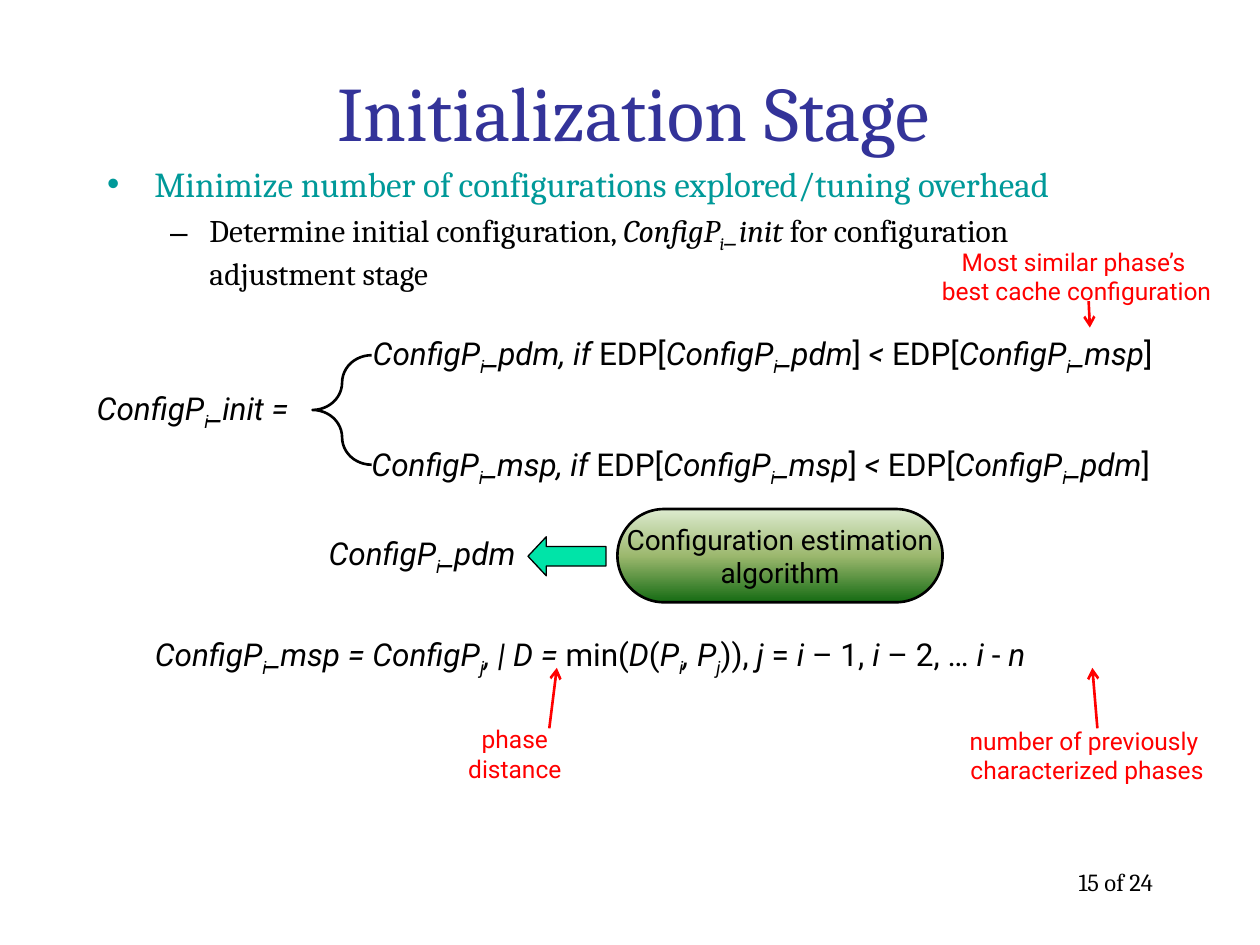
from copy import deepcopy
from dataclasses import dataclass

from lxml.etree import SubElement
from pptx import Presentation
from pptx.dml.color import RGBColor
from pptx.enum.shapes import MSO_CONNECTOR, MSO_SHAPE
from pptx.enum.text import MSO_ANCHOR, MSO_AUTO_SIZE, PP_ALIGN
from pptx.oxml.ns import qn
from pptx.util import Pt


@dataclass(frozen=True)
class Theme:
    serif: str = "Cambria"
    sans: str = "Roboto"
    title: str = "333399"
    heading: str = "009999"
    ink: str = "000000"
    note: str = "FF0000"
    arrow: str = "00E4A8"
    gradient: tuple = ((0, "DDEBCF"), (0.5, "9CB86E"), (1, "156B13"))
    title_size: int = 44
    heading_size: int = 20
    text_size: int = 18
    box_size: int = 16
    note_size: int = 14
    line: float = 1.5
    thin_line: float = 0.75


THEME = Theme()
UPRIGHT, ITALIC, SUBSCRIPT = "upright", "italic", "subscript"


def config(suffix, index="i"):
    return [("ConfigP", ITALIC), (index, SUBSCRIPT), (suffix, ITALIC)]


def choice(winner, loser):
    return [
        *config(f"_{winner}, if "), ("EDP[", UPRIGHT), *config(f"_{winner}"),
        ("]", UPRIGHT), (" < ", ITALIC), ("EDP[", UPRIGHT),
        *config(f"_{loser}"), ("]", UPRIGHT),
    ]


TITLE = "Initialization Stage"
HEADING = [("Minimize number of configurations explored/tuning overhead", UPRIGHT)]
DETAIL = [
    ("Determine initial configuration, ", UPRIGHT), *config("_init "),
    ("for configuration adjustment stage", UPRIGHT),
]
MOST_SIMILAR = [
    *config("_msp = "), *config(", | D = ", "j"), ("min(", UPRIGHT),
    ("D", ITALIC), ("(", UPRIGHT), ("P", ITALIC), ("i", SUBSCRIPT),
    (", P", ITALIC), ("j", SUBSCRIPT), (")), ", UPRIGHT), ("j", ITALIC),
    (" = ", UPRIGHT), ("i", ITALIC), (" – 1, ", UPRIGHT), ("i", ITALIC),
    (" – 2, … ", UPRIGHT), ("i", ITALIC), (" - ", UPRIGHT), ("n", ITALIC),
]
FORMULAS = [
    ((48.2, 218.9, 134, 28.8), config("_init =")),
    ((205.9, 187.2, 488, 28.8), choice("pdm", "msp")),
    ((205.2, 250.6, 485.3, 28.8), choice("msp", "pdm")),
    ((180.7, 301.7, 127.4, 28.8), config("_pdm")),
    ((81.4, 359.3, 558, 28.8), MOST_SIMILAR),
]
NOTES = [
    ((530, 137.5, 170.6, 41), ["Most similar phase’s ", "best cache configuration"],
     (622.1, 172.1, 622.8, 187.2)),
    ((260, 410.4, 68.4, 41), ["phase distance"], (313.9, 416.2, 318.2, 381.6)),
    ((547.2, 411.1, 148, 41), ["number of previously ", "characterized phases"],
     (627.1, 416.2, 624.2, 381.6)),
]
ESTIMATOR = ["Configuration estimation", "algorithm"]
ESTIMATOR_AT = (352.8, 290.9, 185.8, 53.3)
ARROW_AT = (301.7, 306.7, 44.6, 22.3)
BRACE_AT = (178.6, 203, 33.8, 62.6)
TITLE_AT = (56, 18, 612, 90)
BODY_AT = (54, 89.3, 612, 82)
PAGE_AT = (516.2, 491.8, 149.8, 36)


def points(values):
    return [Pt(value) for value in values]


def rgb(value):
    return RGBColor.from_string(value)


def write(paragraph, runs, size, face, color, align=PP_ALIGN.LEFT):
    paragraph.alignment = align
    for text, style in runs:
        run = paragraph.add_run()
        run.text = text
        run.font.name = face
        run.font.size = Pt(size)
        run.font.bold = False
        run.font.italic = style != UPRIGHT
        run.font.color.rgb = rgb(color)
        if style == SUBSCRIPT:
            run._r.get_or_add_rPr().set("baseline", "-25000")


def write_lines(frame, lines, size, face, color, align):
    for number, text in enumerate(lines):
        paragraph = frame.add_paragraph() if number else frame.paragraphs[0]
        write(paragraph, [(text, UPRIGHT)], size, face, color, align)


def add_text_box(slide, place):
    frame = slide.shapes.add_textbox(*points(place)).text_frame
    frame.word_wrap = True
    return frame


def use_placeholder(shape, place, anchor):
    shape.left, shape.top, shape.width, shape.height = points(place)
    frame = shape.text_frame
    frame.auto_size = MSO_AUTO_SIZE.NONE
    frame.vertical_anchor = anchor
    return frame


def set_bullet(paragraph, character, margin, indent):
    properties = paragraph._p.get_or_add_pPr()
    properties.set("marL", str(Pt(margin)))
    properties.set("indent", str(Pt(indent)))
    SubElement(properties, qn("a:buChar"), char=character)


def add_outlined_shape(slide, kind, place, width, adjustments):
    shape = slide.shapes.add_shape(kind, *points(place))
    shape.shadow.inherit = False
    shape.line.color.rgb = rgb(THEME.ink)
    shape.line.width = Pt(width)
    for number, value in enumerate(adjustments):
        shape.adjustments[number] = value
    return shape


def fill_gradient(shape, stops):
    shape.fill.gradient()
    shape.fill.gradient_angle = 270
    stop_list = shape._element.spPr.find(".//" + qn("a:gsLst"))
    while len(stop_list) < len(stops):
        stop_list.append(deepcopy(stop_list[0]))
    for stop, (position, color) in zip(shape.fill.gradient_stops, stops):
        stop.position = position
        stop.color.rgb = rgb(color)


def add_pointer(slide, ends):
    connector = slide.shapes.add_connector(MSO_CONNECTOR.STRAIGHT, *points(ends))
    connector.line.color.rgb = rgb(THEME.note)
    connector.line.width = Pt(THEME.line)
    SubElement(connector.line._get_or_add_ln(), qn("a:tailEnd"), type="arrow")
    SubElement(connector._element.spPr, qn("a:effectLst"))


def main():
    presentation = Presentation()
    presentation.slide_width, presentation.slide_height = Pt(720), Pt(540)
    slide = presentation.slides.add_slide(presentation.slide_layouts[1])

    title = use_placeholder(slide.shapes.title, TITLE_AT, MSO_ANCHOR.MIDDLE)
    write(title.paragraphs[0], [(TITLE, UPRIGHT)], THEME.title_size, THEME.serif,
          THEME.title, PP_ALIGN.CENTER)

    body = use_placeholder(slide.placeholders[1], BODY_AT, MSO_ANCHOR.TOP)
    heading, detail = body.paragraphs[0], body.add_paragraph()
    heading.space_before = Pt(0)
    set_bullet(heading, "•", 27, -27)
    write(heading, HEADING, THEME.heading_size, THEME.serif, THEME.heading)
    detail.level = 1
    detail.space_before = Pt(3.6)
    set_bullet(detail, "–", 58.5, -22.5)
    write(detail, DETAIL, THEME.text_size, THEME.serif, THEME.ink)

    brace = add_outlined_shape(slide, MSO_SHAPE.LEFT_BRACE, BRACE_AT, THEME.line, (0.645, 0.5))
    brace.fill.background()
    estimator = add_outlined_shape(slide, MSO_SHAPE.ROUNDED_RECTANGLE, ESTIMATOR_AT,
                                   THEME.line, (0.5,))
    fill_gradient(estimator, THEME.gradient)
    estimator.text_frame.word_wrap = False
    estimator.text_frame.vertical_anchor = MSO_ANCHOR.MIDDLE
    write_lines(estimator.text_frame, ESTIMATOR, THEME.box_size, THEME.sans, THEME.ink,
                PP_ALIGN.CENTER)
    arrow = add_outlined_shape(slide, MSO_SHAPE.LEFT_ARROW, ARROW_AT, THEME.thin_line, (0.5, 0.47))
    arrow.fill.solid()
    arrow.fill.fore_color.rgb = rgb(THEME.arrow)

    for place, runs in FORMULAS:
        frame = add_text_box(slide, place)
        write(frame.paragraphs[0], runs, THEME.text_size, THEME.sans, THEME.ink)

    for place, lines, ends in NOTES:
        frame = add_text_box(slide, place)
        frame.margin_left = frame.margin_right = Pt(3.6)
        write_lines(frame, lines, THEME.note_size, THEME.sans, THEME.note, PP_ALIGN.CENTER)
        add_pointer(slide, ends)

    page = add_text_box(slide, PAGE_AT)
    write_lines(page, ["15 of 24"], THEME.note_size, THEME.serif, THEME.ink, PP_ALIGN.RIGHT)
    presentation.save("out.pptx")


if __name__ == "__main__":
    main()
